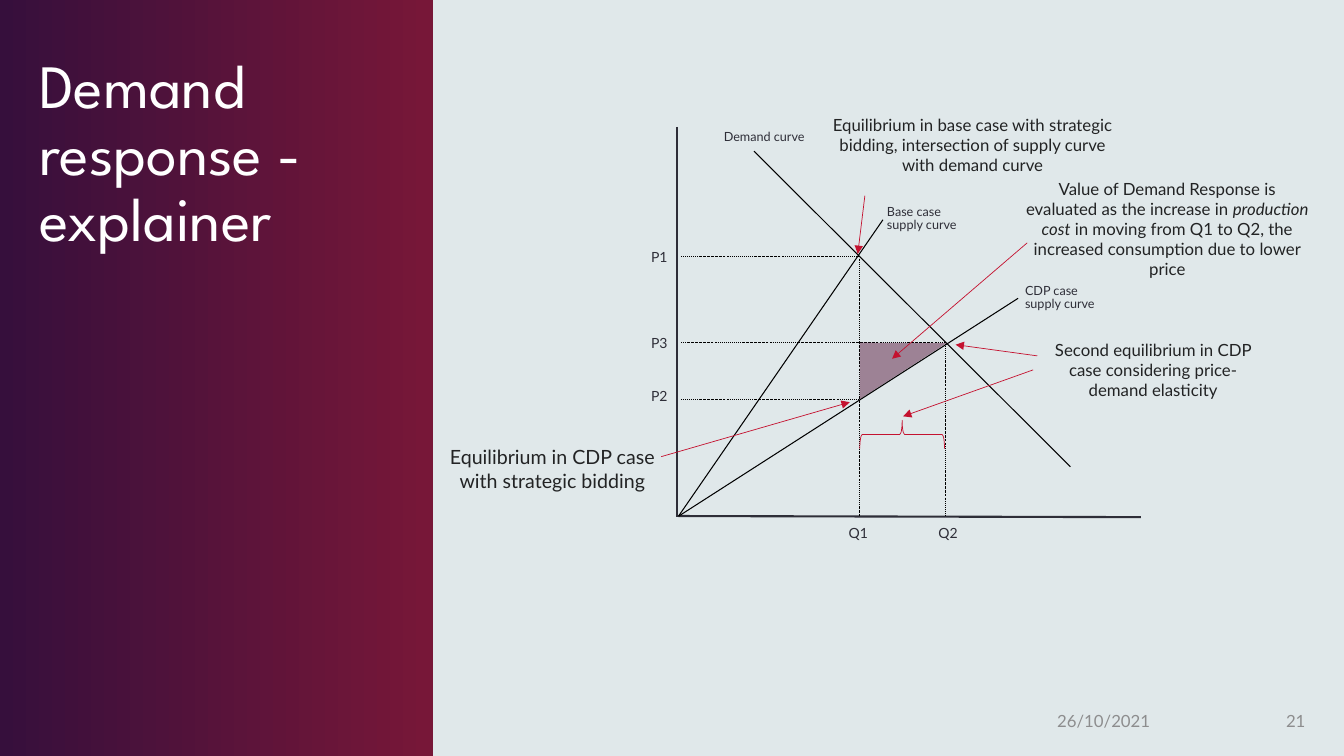
from lxml.etree import SubElement
from pptx import Presentation
from pptx.dml.color import RGBColor
from pptx.enum.dml import MSO_LINE
from pptx.enum.shapes import MSO_CONNECTOR, MSO_SHAPE
from pptx.enum.text import MSO_ANCHOR, MSO_AUTO_SIZE, PP_ALIGN
from pptx.oxml.ns import qn
from pptx.util import Pt

COLORS = {
    "background": "E0E8EA", "panel_left": "360F3C", "panel_right": "771738",
    "title": "FFFFFF", "label": "2E2E38", "note": "222324", "footer": "8D8D8E",
    "curve": "000000", "axis": "2E2E38", "callout": "C41230", "area": "54133A",
}


def add_line(x1, y1, x2, y2, color, width, dash=None, arrow=False):
    c = slide.shapes.add_connector(MSO_CONNECTOR.STRAIGHT, Pt(x1), Pt(y1), Pt(x2), Pt(y2))
    c.line.color.rgb = RGBColor.from_string(COLORS[color])
    c.line.width = Pt(width)
    if dash:
        c.line.dash_style = dash
    if arrow:
        SubElement(c.line._get_or_add_ln(), qn("a:tailEnd"), type="triangle")
    SubElement(c._element.spPr, qn("a:effectLst"))


def add_text(box, runs, size, color, font="Lato", align=PP_ALIGN.LEFT,
             anchor=MSO_ANCHOR.MIDDLE, spacing=None, label=False):
    sp = slide.shapes.add_textbox(*map(Pt, box))
    tf = sp.text_frame
    tf.word_wrap = True
    tf.vertical_anchor = anchor
    p = tf.paragraphs[0]
    p.alignment = align
    if spacing:
        p.line_spacing = spacing
    if label:
        tf.margin_left = tf.margin_right = tf.margin_bottom = 0
        tf.margin_top = Pt(2.9)
        tf.auto_size = MSO_AUTO_SIZE.SHAPE_TO_FIT_TEXT
        p.space_after = Pt(6)
    for text, italic in runs:
        r = p.add_run()
        r.text = text
        r.font.name = font
        r.font.size = Pt(size)
        r.font.italic = italic
        r.font.color.rgb = RGBColor.from_string(COLORS[color])


prs = Presentation()
prs.slide_width, prs.slide_height = Pt(960), Pt(540)
slide = prs.slides.add_slide(prs.slide_layouts[6])
slide.background.fill.solid()
slide.background.fill.fore_color.rgb = RGBColor.from_string(COLORS["background"])

# Title panel
sp = slide.shapes.add_shape(MSO_SHAPE.RECTANGLE, 0, 0, Pt(309.6), Pt(540))
sp.shadow.inherit = False
sp.line.fill.background()
sp.fill.gradient()
sp.fill.gradient_angle = 0
for stop, position, name in zip(sp.fill.gradient_stops, (0, 0.99), ("panel_left", "panel_right")):
    stop.position = position
    stop.color.rgb = RGBColor.from_string(COLORS[name])
add_text((20.9, 36, 261.4, 104.4), [("Demand response - explainer", False)], 44, "title",
         font="League Spartan", anchor=MSO_ANCHOR.TOP, spacing=0.9)

# Key positions on the chart
x0, y0 = 484.6, 368.8
q1, q2 = 613.6, 675.2
p1, p3, p2 = 182.9, 244.2, 285.1

# Axes and demand curve
add_line(483.8, 90.7, 483.8, 369.4, "axis", 1.5)
add_line(x0, 368.6, 815, 369.4, "axis", 1.5)
add_line(538.6, 108, 764.6, 333.4, "curve", 0.75)

# Guide lines from each equilibrium to the axes
for x1, y1, x2, y2 in [
    (q2, p3, q2, y0), (q1, p1, q1, y0), (q1, p2, 486, p2),
    (q2, p3, 486, p3), (q1, p1, 486, p1), (q1, p1, q1, p2),
]:
    add_line(x1, y1, x2, y2, "curve", 0.25, dash=MSO_LINE.DASH_DOT)

# Axis and curve labels
for x, y, w, h, size, text in [
    (606.2, 373.7, 18.7, 13, 10, "Q1"),
    (670.3, 373.7, 18.7, 13, 10, "Q2"),
    (465.1, 176.4, 18.7, 13, 10, "P1"),
    (465.1, 237.6, 18.7, 13, 10, "P3"),
    (465.1, 275.8, 18.7, 13, 10, "P2"),
    (517, 90.7, 62.6, 12.2, 9, "Demand curve"),
    (633.6, 144.7, 62.6, 21.6, 9, "Base case supply curve"),
    (732.2, 200.9, 62.6, 21.6, 9, "CDP case supply curve"),
]:
    add_text((x, y, w, h), [(text, False)], size, "label",
             anchor=MSO_ANCHOR.TOP, spacing=0.85, label=True)

# Shaded value of demand response
sp = slide.shapes.add_shape(MSO_SHAPE.ISOSCELES_TRIANGLE, Pt(625), Pt(234), Pt(40.3), Pt(61.9))
sp.adjustments[0] = 0.009
sp.rotation = 90
sp.shadow.inherit = False
sp.line.fill.background()
sp.fill.solid()
sp.fill.fore_color.rgb = RGBColor.from_string(COLORS["area"])
SubElement(sp._element.spPr.find(".//" + qn("a:srgbClr")), qn("a:alpha"), val="48000")

# Supply curves
for x, y in [(630.7, 157), (727.2, 213.1)]:
    add_line(x0, y0, x, y, "curve", 0.75)

# Brace between Q1 and Q2
sp = slide.shapes.add_shape(MSO_SHAPE.LEFT_BRACE, Pt(634.3), Pt(280.1), Pt(20.2), Pt(60.5))
sp.rotation = 90
sp.shadow.inherit = False
sp.fill.background()
sp.line.color.rgb = RGBColor.from_string(COLORS["callout"])
sp.line.width = Pt(0.5)

# Callout arrows
for x1, y1, x2, y2 in [
    (733.7, 173.5, 637.2, 256.3), (617.8, 139.7, 612.7, 181.4),
    (472.3, 326.2, 607, 287.3), (740.9, 254.2, 682.6, 246.2),
    (738, 264.2, 645.1, 297.4),
]:
    add_line(x1, y1, x2, y2, "callout", 0.5, arrow=True)

# Callout texts
for box, size, runs in [
    ((722.2, 131, 223.2, 64.8), 12, [
        ("Value of Demand Response is evaluated as the increase in ", False),
        ("production cost", True),
        (" in moving from Q1 to Q2, the increased consumption due to lower price", False)]),
    ((583.2, 62.6, 223.2, 81.4), 12, [
        ("Equilibrium in base case with strategic bidding, "
         "intersection of supply curve with demand curve", False)]),
    ((308.9, 308.2, 171.4, 53.3), 14, [
        ("Equilibrium in CDP case with strategic bidding", False)]),
    ((738, 229.7, 171.4, 69.1), 12, [
        ("Second equilibrium in CDP case considering price-demand elasticity", False)]),
]:
    add_text(box, runs, size, "note", align=PP_ALIGN.CENTER)

# Footer
add_text((748.1, 500.4, 136.8, 28.8), [("26/10/2021", False)], 12, "footer")
add_text((894.2, 500.4, 45.4, 28.8), [("21", False)], 12, "footer", align=PP_ALIGN.RIGHT)

prs.save("out.pptx")
